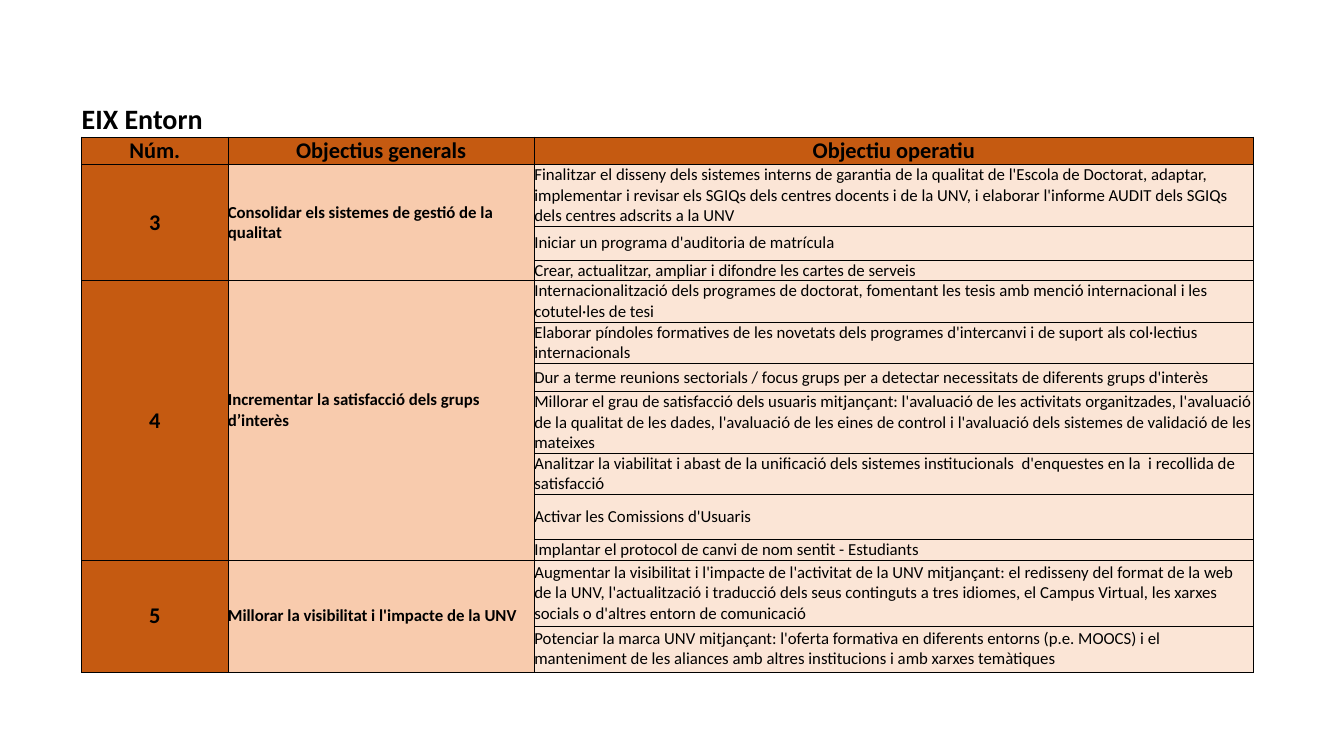
from pptx import Presentation, util as u
from pptx.dml.color import RGBColor
from pptx.enum import text
from pptx.oxml import parse_xml
from pptx.oxml.ns import nsdecls

ORANGE, PEACH, CREAM, BLACK = "C55A11", "F8CBAD", "FBE5D6", "000000"
COLUMN_WIDTHS = [1.45, 3.04, 7.13]
TITLE_HEIGHT, HEADER_HEIGHT = 0.34, 0.27
HEADERS = ["Núm.", "Objectius generals", "Objectiu operatiu"]
GOALS = [
    ("3", "Consolidar els sistemes de gestió de la qualitat", 0, [
        (0.61, "Finalitzar el disseny dels sistemes interns de garantia de la qualitat de l'Escola de Doctorat, "
               "adaptar, implementar i revisar els SGIQs dels centres docents i de la UNV, i elaborar l'informe "
               "AUDIT dels SGIQs dels centres adscrits a la UNV"),
        (0.34, "Iniciar un programa d'auditoria de matrícula"),
        (0.2, "Crear, actualitzar, ampliar i difondre les cartes de serveis"),
    ]),
    ("4", "Incrementar la satisfacció dels grups d’interès", 0.2, [
        (0.41, "Internacionalització dels programes de doctorat, fomentant les tesis amb menció internacional "
               "i les cotutel·les de tesi"),
        (0.41, "Elaborar píndoles formatives de les novetats dels programes d'intercanvi i de suport als "
               "col·lectius internacionals"),
        (0.28, "Dur a terme reunions sectorials / focus grups per a detectar necessitats de diferents grups "
               "d'interès"),
        (0.6, "Millorar el grau de satisfacció dels usuaris mitjançant: l'avaluació de les activitats "
              "organitzades, l'avaluació de la qualitat de les dades, l'avaluació de les eines de control "
              "i l'avaluació dels sistemes de validació de les mateixes"),
        (0.41, "Analitzar la viabilitat i abast de la unificació dels sistemes institucionals  d'enquestes "
               "en la  i recollida de satisfacció"),
        (0.45, "Activar les Comissions d'Usuaris"),
        (0.2, "Implantar el protocol de canvi de nom sentit - Estudiants"),
    ]),
    ("5", "Millorar la visibilitat i l'impacte de la UNV", 0, [
        (0.65, "Augmentar la visibilitat i l'impacte de l'activitat de la UNV mitjançant: el redisseny del "
               "format de la web de la UNV, l'actualització i traducció dels seus continguts a tres idiomes, "
               "el Campus Virtual, les xarxes socials o d'altres entorn de comunicació"),
        (0.46, "Potenciar la marca UNV mitjançant: l'oferta formativa en diferents entorns (p.e. MOOCS) i el "
               "manteniment de les aliances amb altres institucions i amb xarxes temàtiques"),
    ]),
]


def color(value):
    return RGBColor.from_string(value)


def set_borders(cell, **widths):
    properties = cell._tc.get_or_add_tcPr()
    for position, side in enumerate(side for side in "LRTB" if side in widths):
        properties.insert(position, parse_xml(
            f'<a:ln{side} {nsdecls("a")} w="{u.Pt(widths[side])}"><a:solidFill>'
            f'<a:srgbClr val="{BLACK}"/></a:solidFill></a:ln{side}>'))


def format_cell(cell, fill=None, size=12, bold=False, centered=False):
    cell.margin_left = cell.margin_right = cell.margin_top = cell.margin_bottom = 0
    cell.vertical_anchor = text.MSO_ANCHOR.MIDDLE
    if fill:
        cell.fill.solid()
        cell.fill.fore_color.rgb = color(fill)
    else:
        cell.fill.background()
    paragraph = cell.text_frame.paragraphs[0]
    paragraph.alignment = text.PP_ALIGN.CENTER if centered else text.PP_ALIGN.LEFT
    paragraph.font.name = "Calibri"
    paragraph.font.size = u.Pt(size)
    paragraph.font.bold = bold
    paragraph.font.color.rgb = color(BLACK)


def add_title_row(table):
    for column in range(len(HEADERS)):
        cell = table.cell(0, column)
        format_cell(cell, size=20, bold=True)
        cell.vertical_anchor = text.MSO_ANCHOR.BOTTOM
        set_borders(cell, B=1)
    table.cell(0, 0).merge(table.cell(0, 1))
    table.cell(0, 0).text_frame.paragraphs[0].add_run().text = "EIX Entorn"


def add_header_row(table):
    for column, label in enumerate(HEADERS):
        cell = table.cell(1, column)
        cell.text = label
        format_cell(cell, ORANGE, 16, True, True)
        set_borders(cell, L=0.5, R=0.5, T=1, B=1)


def add_goal(table, first, number, goal, bottom_margin, actions):
    last = first + len(actions) - 1
    table.cell(first, 0).text = number
    table.cell(first, 1).text = goal
    for row, (_, action) in enumerate(actions, first):
        table.cell(row, 2).text = action
        format_cell(table.cell(row, 0), ORANGE, 16, True, True)
        format_cell(table.cell(row, 1), PEACH, bold=True)
        format_cell(table.cell(row, 2), CREAM)
        for column in range(len(HEADERS)):
            set_borders(table.cell(row, column), L=0.5, R=0.5,
                        T=1 if row == first else 0.5,
                        B=1 if row == last or column < 2 else 0.5)
    for column in (0, 1):
        table.cell(first, column).merge(table.cell(last, column))
    table.cell(first, 1).margin_bottom = u.Inches(bottom_margin)
    return last + 1


def add_goals_table(slide, left, top):
    heights = [TITLE_HEIGHT, HEADER_HEIGHT]
    heights += [height for *_, actions in GOALS for height, _ in actions]
    table = slide.shapes.add_table(
        len(heights), len(COLUMN_WIDTHS), u.Inches(left), u.Inches(top),
        u.Inches(sum(COLUMN_WIDTHS)), u.Inches(sum(heights))).table
    table.first_row = table.horz_banding = False
    for column, width in zip(table.columns, COLUMN_WIDTHS):
        column.width = u.Inches(width)
    for row, height in zip(table.rows, heights):
        row.height = u.Inches(height)
    add_title_row(table)
    add_header_row(table)
    next_row = 2
    for goal in GOALS:
        next_row = add_goal(table, next_row, *goal)


def main():
    presentation = Presentation()
    presentation.slide_width = u.Inches(13.33)
    presentation.slide_height = u.Inches(7.5)
    slide = presentation.slides.add_slide(presentation.slide_layouts[6])
    add_goals_table(slide, 0.81, 1.02)
    presentation.save("out.pptx")


if __name__ == "__main__":
    main()
